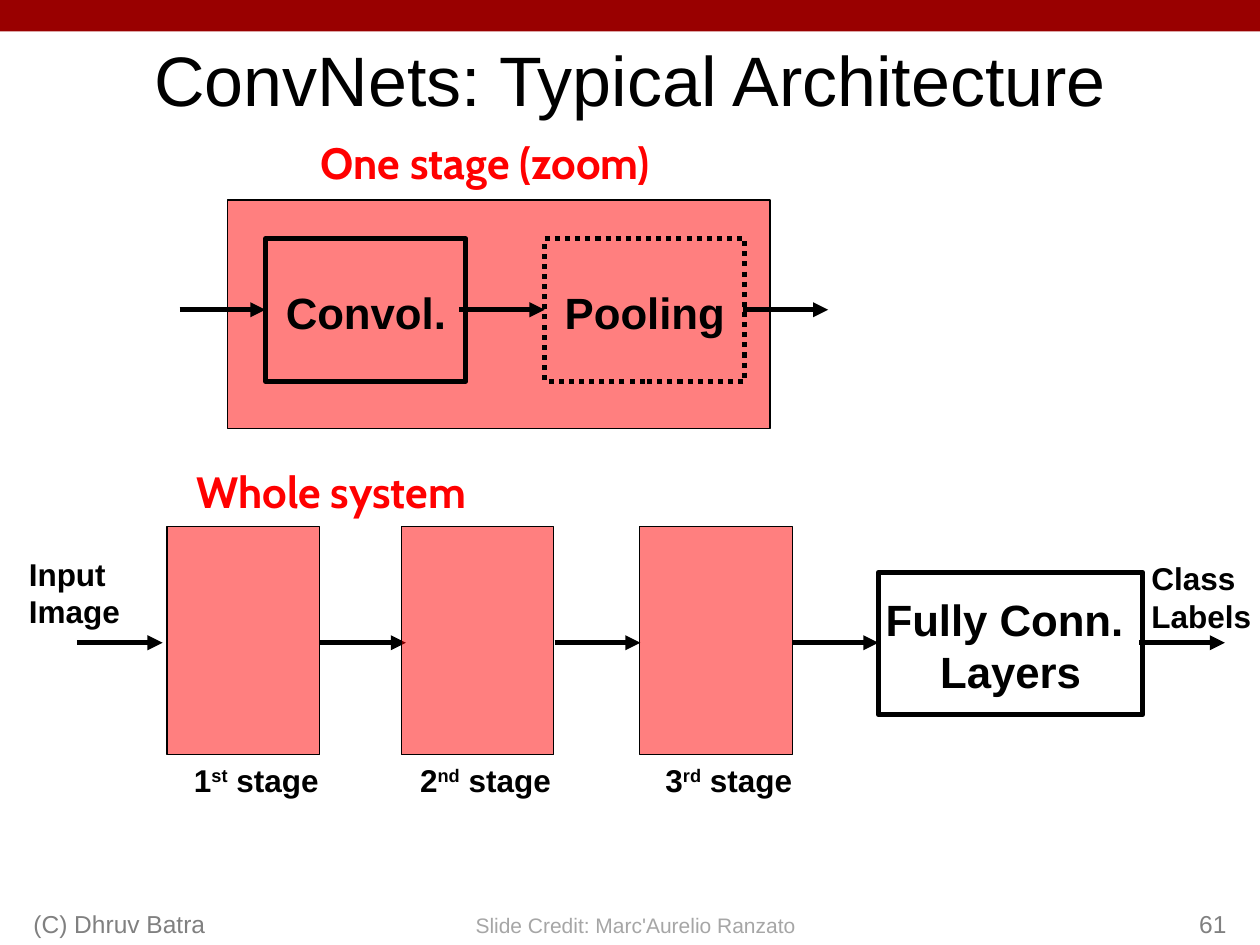
from dataclasses import dataclass

from lxml import etree
from pptx import Presentation
from pptx import util as u
from pptx.dml.color import RGBColor
from pptx.enum import dml, shapes, text
from pptx.oxml.ns import qn


@dataclass(frozen=True)
class Theme:
    bar: str = "990000"
    accent: str = "FF0000"
    ink: str = "000000"
    credit: str = "A6A6A6"
    footer: str = "808080"
    body_font: str = "Arial"
    heading_font: str = "Cabin"
    title_size: float = 40
    block_size: float = 25
    label_size: float = 18
    footer_size: float = 14
    credit_size: float = 12
    thin: float = 0.75
    thick: float = 2.89


LEFT, CENTER, RIGHT = text.PP_ALIGN.LEFT, text.PP_ALIGN.CENTER, text.PP_ALIGN.RIGHT
TOP, MIDDLE, BOTTOM = text.MSO_ANCHOR.TOP, text.MSO_ANCHOR.MIDDLE, text.MSO_ANCHOR.BOTTOM
LABEL_INSETS = (6.5, 4.5, 6.5, 3)
BLOCK_INSETS = (8, 6.5, 8, 4.5)
FOOTER_INSETS = (7.2, 3.6, 7.2, 3.6)


class SlideBuilder:
    def __init__(self, slide, theme):
        self.slide = slide
        self.theme = theme

    def set_text(self, shape, lines, size, color=None, font=None, bold=True, align=LEFT,
                 anchor=TOP, insets=LABEL_INSETS, wrap=True):
        frame = shape.text_frame
        frame.word_wrap = wrap
        frame.auto_size = text.MSO_AUTO_SIZE.NONE
        frame.vertical_anchor = anchor
        (frame.margin_left, frame.margin_top,
         frame.margin_right, frame.margin_bottom) = map(u.Pt, insets)
        for index, line in enumerate(lines):
            paragraph = frame.add_paragraph() if index else frame.paragraphs[0]
            paragraph.text = line
            paragraph.alignment = align
            paragraph.font.size = u.Pt(size)
            paragraph.font.name = font or self.theme.body_font
            paragraph.font.bold = bold
            paragraph.font.color.rgb = RGBColor.from_string(color or self.theme.ink)
        return frame.paragraphs[0]

    def title(self, words, box):
        shape = self.slide.shapes.title
        shape.left, shape.top, shape.width, shape.height = map(u.Pt, box)
        self.set_text(shape, [words], self.theme.title_size, bold=False, align=CENTER,
                      anchor=MIDDLE, insets=FOOTER_INSETS)

    def label(self, lines, box, size, **style):
        shape = self.slide.shapes.add_textbox(*map(u.Pt, box))
        return self.set_text(shape, lines, size, **style)

    def heading(self, words, box):
        self.label([words], box, self.theme.block_size, color=self.theme.accent,
                   font=self.theme.heading_font, align=CENTER, insets=(6.5, 5, 6.5, 3))

    def footer(self, words, box, align):
        self.label([words], box, self.theme.footer_size, color=self.theme.footer,
                   bold=False, align=align, anchor=BOTTOM, insets=FOOTER_INSETS)

    def stage_label(self, number, suffix, box):
        paragraph = self.label([number], box, self.theme.label_size, align=CENTER)
        raised = paragraph.add_run()
        raised.text = suffix
        raised.font._element.set("baseline", "33000")
        paragraph.add_run().text = " stage"

    def rectangle(self, box, fill=None, opacity=100, line=None):
        shape = self.slide.shapes.add_shape(shapes.MSO_SHAPE.RECTANGLE, *map(u.Pt, box))
        shape.shadow.inherit = False
        if fill:
            shape.fill.solid()
            shape.fill.fore_color.rgb = RGBColor.from_string(fill)
            if opacity < 100:
                color = shape._element.spPr.find(qn("a:solidFill"))[0]
                etree.SubElement(color, qn("a:alpha"), val=str(opacity * 1000))
        else:
            shape.fill.background()
        if line:
            shape.line.color.rgb = RGBColor.from_string(self.theme.ink)
            shape.line.width = u.Pt(line)
        else:
            shape.line.fill.background()
        return shape

    def stage(self, box):
        self.rectangle(box, self.theme.accent, 50, self.theme.thin)

    def block(self, lines, box, dotted=False):
        shape = self.rectangle(box, line=self.theme.thick)
        if dotted:
            shape.line.dash_style = dml.MSO_LINE.ROUND_DOT
        self.set_text(shape, lines, self.theme.block_size, align=CENTER, anchor=MIDDLE,
                      insets=BLOCK_INSETS, wrap=False)

    def arrow(self, left, y, length=49):
        connector = self.slide.shapes.add_connector(
            shapes.MSO_CONNECTOR.STRAIGHT, *map(u.Pt, (left, y, left + length, y)))
        connector.line.color.rgb = RGBColor.from_string(self.theme.ink)
        connector.line.width = u.Pt(self.theme.thick)
        properties = connector._element.spPr
        etree.SubElement(properties.find(qn("a:ln")), qn("a:tailEnd"), type="triangle")
        etree.SubElement(properties, qn("a:effectLst"))


def main():
    presentation = Presentation()
    presentation.slide_width, presentation.slide_height = u.Pt(720), u.Pt(540)
    theme = Theme()
    builder = SlideBuilder(presentation.slides.add_slide(presentation.slide_layouts[5]), theme)

    builder.rectangle((0, 0, 720, 18), theme.bar)
    builder.title("ConvNets: Typical Architecture", (0, 18, 720, 54))

    builder.heading("One stage (zoom)", (130.3, 72.7, 293.8, 34.6))
    builder.stage((129.8, 114.3, 310.3, 130.5))
    builder.block(["Convol."], (151.8, 136.5, 114.5, 81.4))
    builder.block(["Pooling"], (311.2, 136.5, 114.5, 81.4), dotted=True)
    for left in (102.7, 262.2, 424.3):
        builder.arrow(left, 177)

    builder.heading("Whole system", (87.1, 260.6, 204.5, 34.6))
    for left in (43.9, 183, 317, 453, 651):
        builder.arrow(left, 367.3)
    stages = [("1", "st", 95.5, 97.2), ("2", "nd", 229.3, 228.2), ("3", "rd", 365.6, 367.2)]
    for number, suffix, left, label_left in stages:
        builder.stage((left, 301, 87.2, 130.3))
        builder.stage_label(number, suffix, (label_left, 430.6, 98.6, 27.4))
    builder.block(["Fully Conn. ", "Layers"], (502, 327, 151, 81.4))
    builder.label(["Input Image"], (10, 312.5, 98.6, 47.5), theme.label_size)
    builder.label(["Class", "Labels"], (651.5, 315, 80.5, 47.5), theme.label_size)

    builder.label(["Slide Credit: Marc'Aurelio Ranzato"], (263.5, 517.7, 199.5, 21.6),
                  theme.credit_size, color=theme.credit, bold=False, align=CENTER,
                  insets=FOOTER_INSETS, wrap=False)
    builder.footer("(C) Dhruv Batra", (12, 504, 228, 36), LEFT)
    builder.footer("61", (558, 504, 150, 36), RIGHT)
    presentation.save("out.pptx")


if __name__ == "__main__":
    main()
